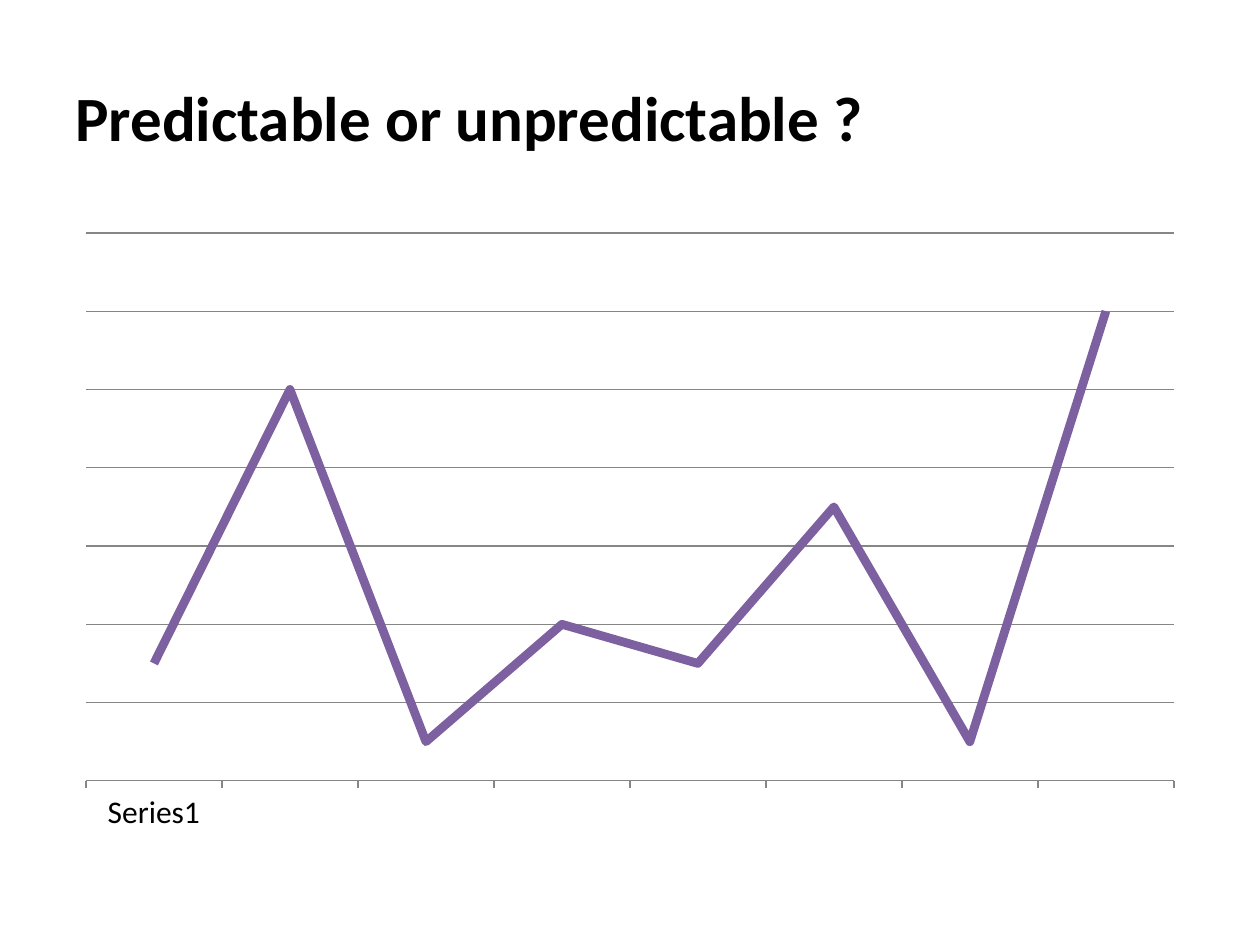
from dataclasses import dataclass

from lxml import etree
from pptx import Presentation, util as u
from pptx.chart.data import CategoryChartData
from pptx.dml.color import RGBColor
from pptx.enum import chart as ch, text
from pptx.oxml.ns import qn


@dataclass(frozen=True)
class Theme:
    """Colours, font and type sizes of the slide."""
    font: str = "Calibri"
    ink: RGBColor = RGBColor(0, 0, 0)
    grid: RGBColor = RGBColor(0x86, 0x86, 0x86)
    line: RGBColor = RGBColor(0x7D, 0x60, 0xA0)
    head: int = 36
    body: int = 18
    thin: float = 0.75
    thick: int = 5


THEME = Theme()


def px(num):
    """Turn pixels into EMU."""
    return u.Emu(round(num * 914400 / 126))


def apply(item, **vals):
    """Set each attribute of an object from a dict."""
    for key, val in vals.items():
        setattr(item, key, val)


def style(font, size, bold):
    """Give a font the theme's face and colour."""
    apply(font, name=THEME.font, size=u.Pt(size), bold=bold)
    font.color.rgb = THEME.ink


def stroke(line, color, width):
    """Colour a line and set its width in points."""
    line.color.rgb = color
    line.width = u.Pt(width)


def title(slide, box, words):
    """Place the heading in its box."""
    frame = slide.shapes.add_textbox(*map(px, box)).text_frame
    apply(frame, word_wrap=True, vertical_anchor=text.MSO_ANCHOR.MIDDLE)
    para = frame.paragraphs[0]
    para.text = words
    style(para.font, THEME.head, True)


def layout(plot, box, area):
    """Fix the inner plot area as a share of the chart box."""
    old = plot.find(qn("c:layout"))
    if old is not None:
        plot.remove(old)
    root = etree.Element(qn("c:layout"))
    plot.insert(0, root)
    man = etree.SubElement(root, qn("c:manualLayout"))
    left, top, wide, high = box
    vals = {
        "layoutTarget": "inner", "xMode": "edge", "yMode": "edge",
        "x": (area[0] - left) / wide, "y": (area[1] - top) / high,
        "w": area[2] / wide, "h": area[3] / high,
    }
    for key, val in vals.items():
        etree.SubElement(man, qn(f"c:{key}")).set("val", str(val))


def graph(slide, box, area, vals):
    """Place the line chart in its box."""
    data = CategoryChartData()
    data.categories = ["Series1"] + [""] * (len(vals) - 1)
    data.add_series("Series 1", vals)
    chart = slide.shapes.add_chart(
        ch.XL_CHART_TYPE.LINE, *map(px, box), data).chart
    apply(chart, has_legend=False, has_title=False)
    style(chart.font, THEME.body, False)
    layout(chart.plots[0]._element.getparent(), box, area)

    axis = chart.value_axis
    apply(axis, minimum_scale=0, maximum_scale=7, major_unit=1,
          has_major_gridlines=True, visible=False)
    stroke(axis.major_gridlines.format.line, THEME.grid, THEME.thin)

    base = chart.category_axis
    apply(base, major_tick_mark=ch.XL_TICK_MARK.OUTSIDE,
          minor_tick_mark=ch.XL_TICK_MARK.NONE)
    stroke(base.format.line, THEME.grid, THEME.thin)

    chart.plots[0].vary_by_categories = False
    series = chart.plots[0].series[0]
    series.smooth = False
    series.marker.style = ch.XL_MARKER_STYLE.NONE
    stroke(series.format.line, THEME.line, THEME.thick)


def main():
    """Build and save the slide."""
    deck = Presentation()
    apply(deck, slide_width=px(1260), slide_height=px(945))
    slide = deck.slides.add_slide(deck.slide_layouts[6])
    title(slide, (63, 38, 1134, 157), "Predictable or unpredictable ?")
    graph(slide, (63, 220, 1134, 624), (86, 233, 1088, 548),
          (1.5, 5, 0.5, 2, 1.5, 3.5, 0.5, 6))
    deck.save("out.pptx")


if __name__ == "__main__":
    main()
